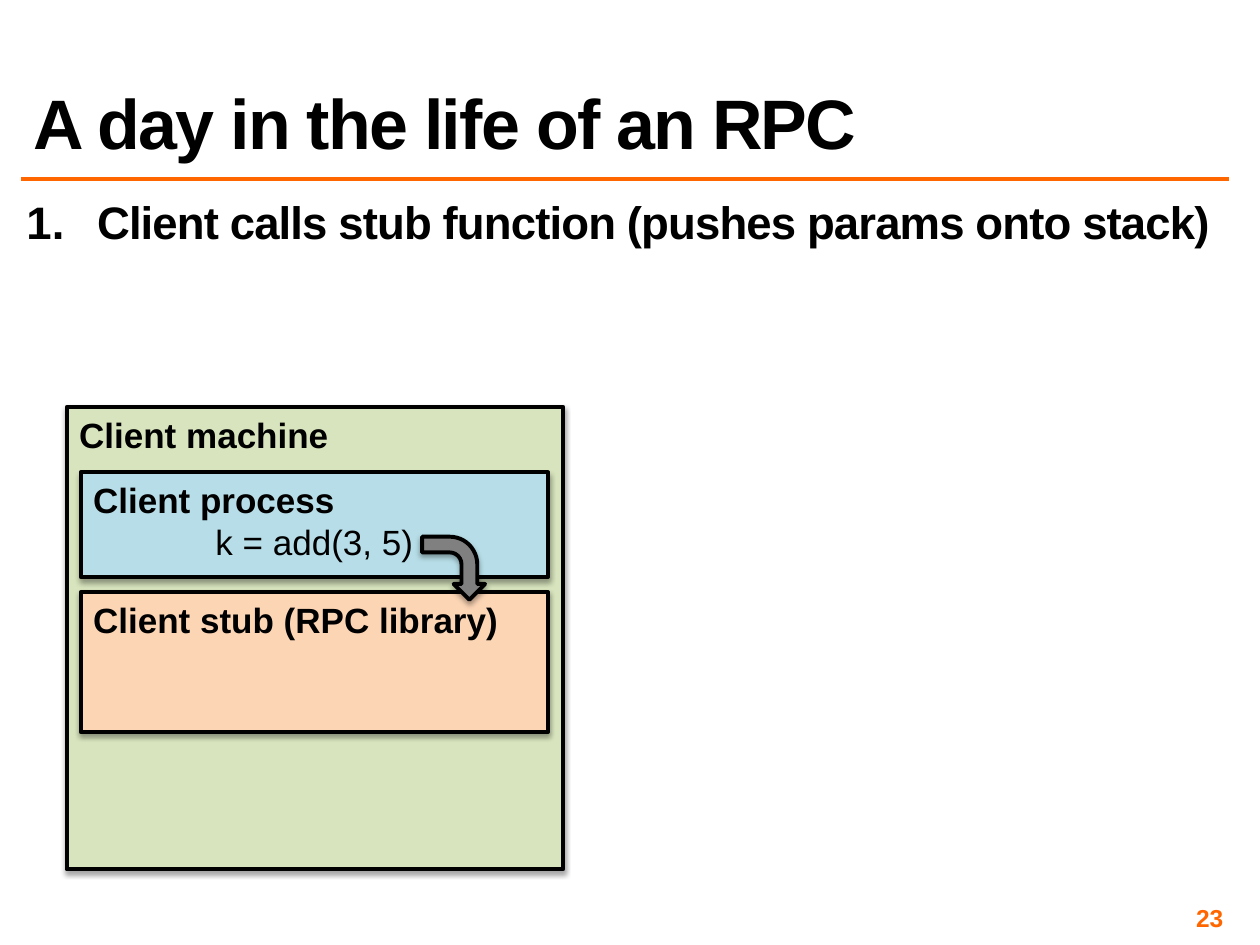
from lxml.etree import SubElement
from pptx import Presentation
from pptx.dml.color import RGBColor
from pptx.enum.shapes import MSO_CONNECTOR, MSO_SHAPE
from pptx.enum.text import MSO_ANCHOR, PP_ALIGN
from pptx.oxml.ns import qn
from pptx.util import Inches, Pt

BLACK = RGBColor(0x00, 0x00, 0x00)
ORANGE = RGBColor(0xFF, 0x66, 0x00)
GREEN = RGBColor(0xD7, 0xE4, 0xBD)
BLUE = RGBColor(0xB7, 0xDE, 0xE8)
PEACH = RGBColor(0xFC, 0xD5, 0xB5)
GRAY = RGBColor(0x80, 0x80, 0x80)

TITLE = "A day in the life of an RPC"
STEP = "Client calls stub function (pushes params onto stack)"
PAGE = "23"
LEFT, WIDTH = 0.17, 9.58
INNER_LEFT, INNER_WIDTH = 0.64, 3.71

# fill, (left, top, width, height), heading, centred code line
BOXES = [
    (GREEN, (0.53, 3.23, 3.94, 3.67), "Client machine", None),
    (BLUE, (INNER_LEFT, 3.75, INNER_WIDTH, 0.83), "Client process", "k = add(3, 5)"),
    (PEACH, (INNER_LEFT, 4.7, INNER_WIDTH, 1.11), "Client stub (RPC library)", None),
]
CALL_ARROW = (3.35, 4.26, 0.5, 0.5)


def add_run(p, text, size, color=BLACK, bold=True, spacing=0):
    r = p.add_run()
    r.text = text
    font = {"name": "Arial", "size": Pt(size), "bold": bold}
    for name, value in font.items():
        setattr(r.font, name, value)
    r.font.color.rgb = color
    if spacing:
        r.font._element.set("spc", str(int(spacing * 100)))


def add_text(slide, at, text, size, anchor=MSO_ANCHOR.TOP, inset=0.04, **style):
    tf = slide.shapes.add_textbox(*map(Inches, at)).text_frame
    tf.word_wrap = True
    tf.vertical_anchor = anchor
    for side in ("left", "top", "right", "bottom"):
        setattr(tf, f"margin_{side}", Inches(inset))
    p = tf.paragraphs[0]
    add_run(p, text, size, **style)
    return p


def number_paragraph(p, indent):
    pPr = p._p.get_or_add_pPr()
    pPr.set("marL", str(Inches(indent)))
    pPr.set("indent", str(-Inches(indent)))
    SubElement(pPr, qn("a:buFont"), typeface="Arial")
    SubElement(pPr, qn("a:buAutoNum"), type="arabicPeriod")


def add_shadow(s):
    s.shadow.inherit = False
    effects = s._element.spPr.find(qn("a:effectLst"))
    shadow = SubElement(effects, qn("a:outerShdw"), blurRad=str(Pt(3.1)),
                        dist=str(Pt(1.8)), dir="5400000", rotWithShape="0")
    color = SubElement(shadow, qn("a:srgbClr"), val=str(BLACK))
    SubElement(color, qn("a:alpha"), val="35000")


def add_outlined(slide, kind, at, fill):
    s = slide.shapes.add_shape(kind, *map(Inches, at))
    s.fill.solid()
    s.fill.fore_color.rgb = fill
    s.line.color.rgb = BLACK
    s.line.width = Pt(2.25)
    add_shadow(s)
    return s


def add_box(slide, fill, at, heading, code):
    tf = add_outlined(slide, MSO_SHAPE.RECTANGLE, at, fill).text_frame
    tf.word_wrap = True
    tf.vertical_anchor = MSO_ANCHOR.TOP
    p = tf.paragraphs[0]
    p.alignment = PP_ALIGN.LEFT
    add_run(p, heading, 20)
    if code:
        p = tf.add_paragraph()
        p.alignment = PP_ALIGN.CENTER
        add_run(p, code, 20, bold=False)


def main():
    prs = Presentation()
    prs.slide_width, prs.slide_height = Inches(10), Inches(7.5)
    slide = prs.slides.add_slide(prs.slide_layouts[6])

    rule = slide.shapes.add_connector(
        MSO_CONNECTOR.STRAIGHT, *map(Inches, (LEFT, 1.42, LEFT + WIDTH, 1.42)))
    rule.line.color.rgb = ORANGE
    rule.line.width = Pt(2)
    SubElement(rule._element.spPr, qn("a:effectLst"))

    p = add_text(slide, (LEFT, 1.58, WIDTH, 1.4), STEP, 26, spacing=-0.5)
    p.line_spacing = 0.8
    p.space_before = Pt(5.2)
    number_paragraph(p, 0.56)

    p = add_text(slide, (7.42, 7.17, 2.33, 0.23), PAGE, 14,
                 anchor=MSO_ANCHOR.MIDDLE, color=ORANGE)
    p.alignment = PP_ALIGN.RIGHT

    p = add_text(slide, (LEFT, 0.17, WIDTH, 1.17), TITLE, 40,
                 anchor=MSO_ANCHOR.BOTTOM, inset=0.05, spacing=-1)
    p.line_spacing = 0.8
    slide.shapes[-1].text_frame.margin_left = Inches(0.1)

    for box in BOXES:
        add_box(slide, *box)
    add_outlined(slide, MSO_SHAPE.BENT_ARROW, CALL_ARROW, GRAY).rotation = 90

    prs.save("out.pptx")


if __name__ == "__main__":
    main()
